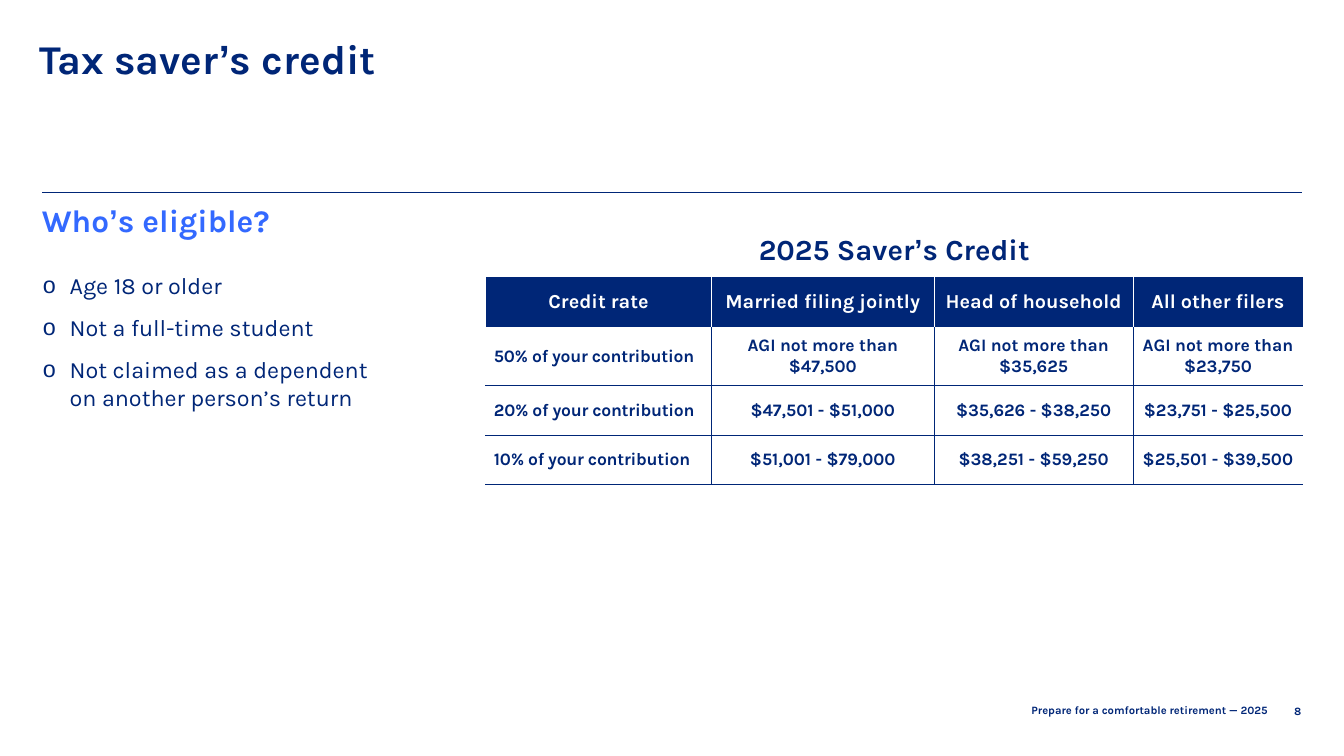
import pptx
import pptx.util
import pptx.dml.color
import pptx.enum.shapes
import pptx.enum.text
import pptx.oxml.ns
from lxml import etree

Pt = pptx.util.Pt
ALIGN = pptx.enum.text.PP_ALIGN
ANCHOR = pptx.enum.text.MSO_ANCHOR
COLORS = {"navy": "002677", "blue": "3369FF", "white": "FFFFFF"}
TEXT_FONT = "Karla"
QUOTE_FONT = "Arial"
CREDIT_ROWS = [
    ["Credit rate", "Married filing jointly", "Head of household", "All other filers"],
    ["50% of your contribution", "AGI not more than\v$47,500",
     "AGI not more than\v$35,625", "AGI not more than\v$23,750"],
    ["20% of your contribution", "$47,501 - $51,000", "$35,626 - $38,250", "$23,751 - $25,500"],
    ["10% of your contribution", "$51,001 - $79,000", "$38,251 - $59,250", "$25,501 - $39,500"],
]
CONDITIONS = [
    "Age 18 or older",
    "Not a full-time student",
    "Not claimed as a dependent on another person’s return",
]


def rgb(color):
    return pptx.dml.color.RGBColor.from_string(COLORS[color])


def add_xml(parent, tag, **attributes):
    child = etree.SubElement(parent, pptx.oxml.ns.qn(tag))
    for name, value in attributes.items():
        child.set(name, value)
    return child


def style_span(span, size, color, bold, font=TEXT_FONT):
    span.font.name = font
    span.font.size = Pt(size)
    span.font.bold = bold
    span.font.color.rgb = rgb(color)


def write_para(para, text, size, color="navy", align=ALIGN.LEFT, bold=True):
    para.text = text
    para.alignment = align
    for span in para.runs:
        style_span(span, size, color, bold)


def write_heading(para, text, size, color="navy", align=ALIGN.LEFT):
    para.alignment = align
    before, quote, after = text.partition("’")
    for part, font in ((before, TEXT_FONT), (quote, QUOTE_FONT), (after, TEXT_FONT)):
        span = para.add_run()
        span.text = part
        style_span(span, size, color, True, font)


def place(shape, box, anchor=ANCHOR.TOP):
    shape.left, shape.top, shape.width, shape.height = [Pt(value) for value in box]
    frame = shape.text_frame
    frame.word_wrap = True
    frame.auto_size = pptx.enum.text.MSO_AUTO_SIZE.NONE
    frame.vertical_anchor = anchor
    return frame


def add_text_box(page, box, anchor=ANCHOR.TOP):
    return place(page.shapes.add_textbox(0, 0, 0, 0), box, anchor)


def add_title(page, box):
    left, top, width, height = box
    para = place(page.shapes.title, (left, top, width, 60.5)).paragraphs[0]
    write_heading(para, "Tax saver’s credit", 35)
    para.line_spacing = Pt(30)
    para.space_before = Pt(0)
    rule_y = Pt(top + height)
    rule = page.shapes.add_connector(
        pptx.enum.shapes.MSO_CONNECTOR.STRAIGHT,
        Pt(left + 9.4), rule_y, Pt(left + width), rule_y)
    rule.line.color.rgb = rgb("navy")
    rule.line.width = Pt(0.5)
    add_xml(rule._element.spPr, "a:effectLst")


def add_eligibility(page, box):
    left, top, width, height = box
    heading = add_text_box(page, (left, top, width, 42.5)).paragraphs[0]
    write_heading(heading, "Who’s eligible?", 27, "blue")
    heading.line_spacing = 0.9
    frame = place(page.placeholders[1], (left + 0.7, top + 57, width, height - 57))
    for index, condition in enumerate(CONDITIONS):
        para = frame.paragraphs[0] if index == 0 else frame.add_paragraph()
        write_para(para, condition, 20, bold=False)
        para.space_before = Pt(12 if index else 0)
        properties = para._p.get_or_add_pPr()
        properties.set("marL", str(Pt(23)))
        properties.set("indent", str(-Pt(23)))
        add_xml(properties, "a:buFont", typeface=QUOTE_FONT)
        add_xml(properties, "a:buChar", char="o")


def set_borders(cell, **sides):
    properties = cell._tc.get_or_add_tcPr()
    for position, name in enumerate(("left", "right", "top", "bottom")):
        color, width = sides.get(name) or (None, 0)
        border = etree.Element(pptx.oxml.ns.qn("a:ln" + name[0].upper()))
        border.set("w", str(Pt(width)))
        if color:
            add_xml(add_xml(border, "a:solidFill"), "a:srgbClr", val=COLORS[color])
        else:
            add_xml(border, "a:noFill")
        properties.insert(position, border)


def set_cell(cell, margins, anchor, fill=None):
    cell.margin_left, cell.margin_top, cell.margin_right, cell.margin_bottom = [
        Pt(value) for value in margins]
    cell.vertical_anchor = anchor
    if fill:
        cell.fill.solid()
        cell.fill.fore_color.rgb = rgb(fill)
    else:
        cell.fill.background()


def add_credit_table(page, box):
    column_widths = (193.7, 190.8, 170.6, 145.4)
    row_heights = (55.4, 43.9, 42.5, 42.5, 42.5)
    table = page.shapes.add_table(
        len(row_heights), len(column_widths), *[Pt(value) for value in box]).table
    table.first_row = table.horz_banding = False
    for column, width in zip(table.columns, column_widths):
        column.width = Pt(width)
    for row, height in zip(table.rows, row_heights):
        row.height = Pt(height)

    caption = table.cell(0, 0)
    caption.merge(table.cell(0, len(column_widths) - 1))
    set_cell(caption, (0, 3.6, 0, 7.2), ANCHOR.BOTTOM)
    write_heading(caption.text_frame.paragraphs[0], "2025 Saver’s Credit", 25, align=ALIGN.CENTER)
    white, navy = ("white", 1), ("navy", 0.5)
    for cell in table.rows[0].cells:
        set_borders(cell, left=white, right=white, top=white, bottom=white)

    for row, texts in enumerate(CREDIT_ROWS, 1):
        for column, text in enumerate(texts):
            cell = table.cell(row, column)
            para = cell.text_frame.paragraphs[0]
            last = column == len(texts) - 1
            if row == 1:
                set_cell(cell, (0, 0, 0, 0), ANCHOR.MIDDLE, "navy")
                write_para(para, text, 17, "white", ALIGN.CENTER)
                set_borders(cell, left=white, top=white, right=None if last else white)
                continue
            first = column == 0
            set_cell(cell, (7.2 if first else 0, 7.2, 0, 7.2), ANCHOR.MIDDLE)
            write_para(para, text, 15, align=ALIGN.LEFT if first else ALIGN.CENTER)
            if first:
                para.runs[0].font._element.set("spc", "-20")
            set_borders(cell, left=white if first else navy, right=None if last else navy,
                        top=navy if row > 2 else None, bottom=navy)


def add_footer(page, box):
    left, top, width, height = box
    number_width = 28.8
    caption = add_text_box(page, (left, top, width - number_width, height), ANCHOR.MIDDLE)
    write_para(caption.paragraphs[0], "Prepare for a comfortable retirement — 2025",
               9.6, align=ALIGN.RIGHT)
    number = add_text_box(page, (left + width - number_width, top, number_width, 13.7))
    write_para(number.paragraphs[0], "8", 9.6, align=ALIGN.RIGHT)


def main():
    deck = pptx.Presentation()
    deck.slide_width, deck.slide_height = Pt(1152), Pt(648)
    page = deck.slides.add_slide(deck.slide_layouts[1])
    add_title(page, (26.6, 37.4, 1089.4, 127.5))
    add_eligibility(page, (28.8, 172.1, 308.9, 215.4))
    add_credit_table(page, (416.2, 181.4, 700.5, 226.8))
    add_footer(page, (704.2, 599.8, 418.3, 17.3))
    deck.save("out.pptx")


if __name__ == "__main__":
    main()
